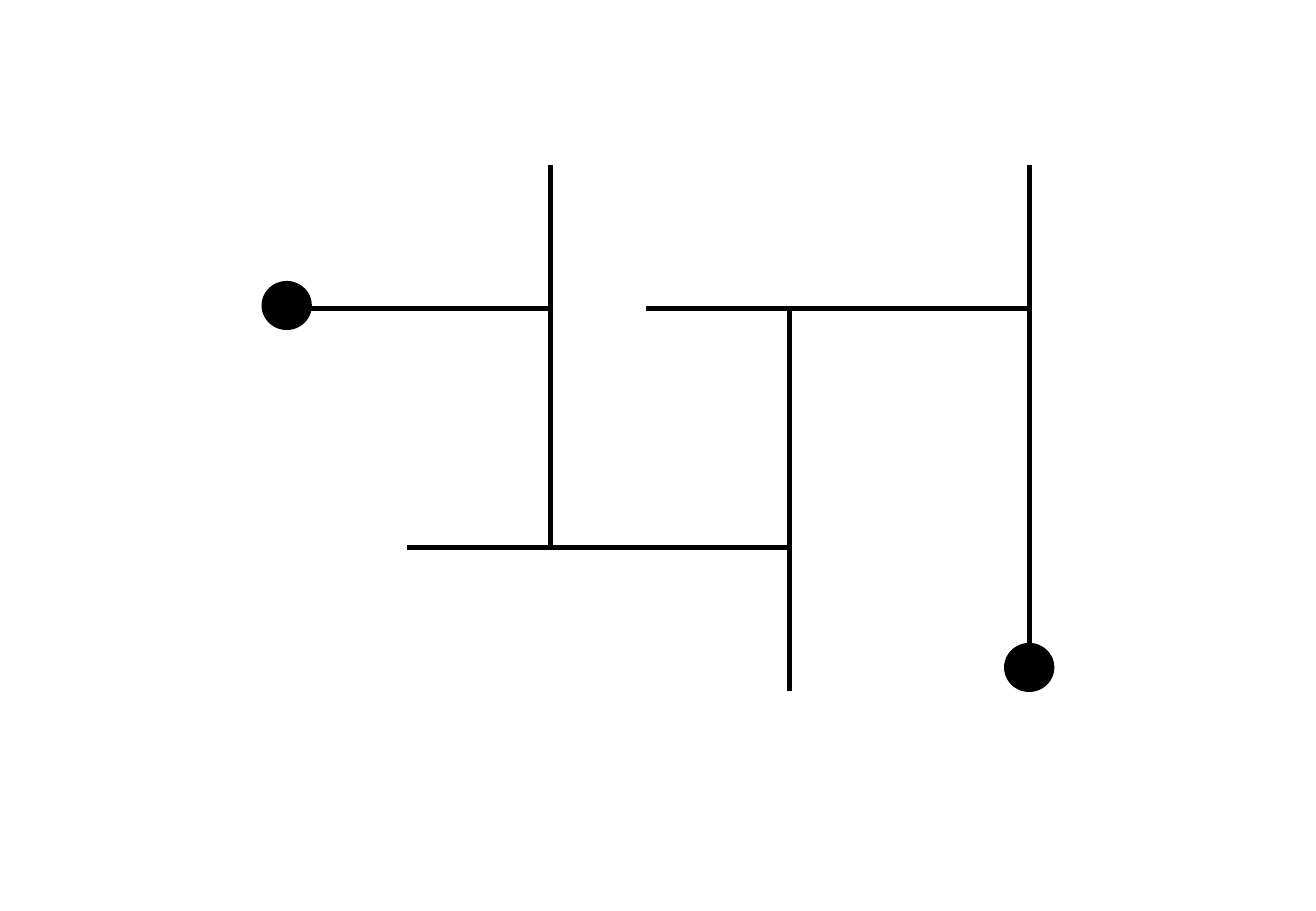
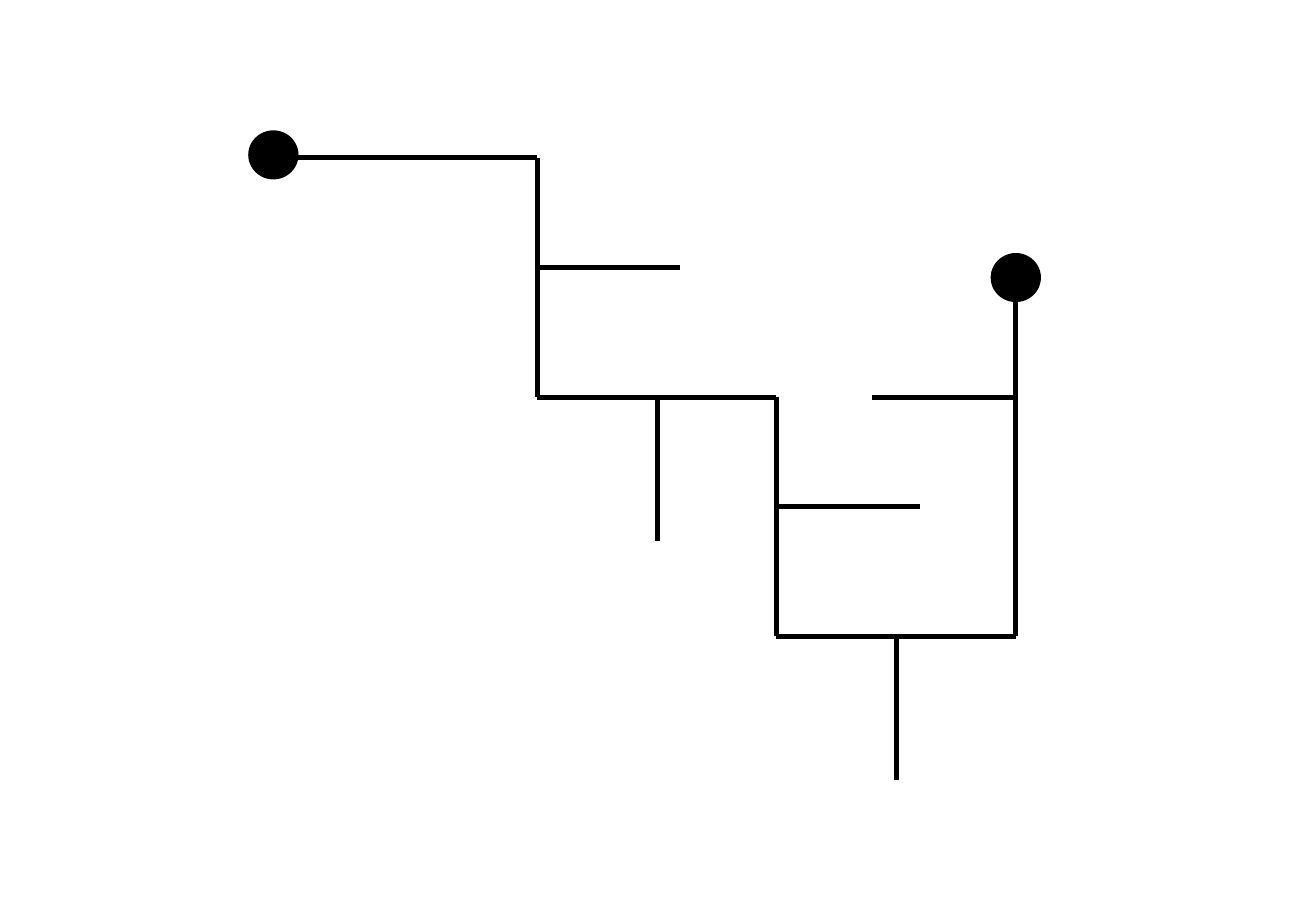
"""Build two slides of branching line diagrams with round end nodes."""
from dataclasses import dataclass

from lxml import etree
from pptx import Presentation
from pptx import util as u
from pptx.dml.color import RGBColor
from pptx.enum import shapes
from pptx.oxml import ns
from pptx.shapes.connector import Connector
from pptx.shapes.shapetree import GroupShapes

COLORS = {"ink": "000000", "background": "FFFFFF"}
STEP = 1.97
STUB = 1.18
TAIL = 2.76
MIDDLE = 0.99
SIDE = 0.9
NODE_WIDTH, NODE_HEIGHT = 0.4, 0.39
START_DROP = 0.22


@dataclass(frozen=True)
class Branch:
    x: float
    y: float
    across: float = 0
    down: float = 0


@dataclass(frozen=True)
class Diagram:
    left: float
    top: float
    end_node_top: float
    branches: tuple[Branch, ...]


DIAGRAMS = (
    Diagram(2.56, 2.54, 5.3, (
        Branch(2 * STEP, STEP, down=-STEP),
        Branch(0, 0, across=STEP),
        Branch(STEP, STEP, down=-STEP),
        Branch(STEP, 0, down=-STUB),
        Branch(STEP - STUB, STEP, across=STUB),
        Branch(2 * STEP, STEP + STUB, down=-STUB),
        Branch(STEP, STEP, across=STEP),
        Branch(2 * STEP, 0, across=STEP),
        Branch(2 * STEP - STUB, 0, across=STUB),
        Branch(3 * STEP, 0, down=-STUB),
        Branch(3 * STEP, TAIL, down=-TAIL),
    )),
    Diagram(2.45, 1.3, 2.09, (
        Branch(2 * STEP, 2 * STEP, down=-STEP),
        Branch(0, 0, across=STEP),
        Branch(STEP, STEP, down=-STEP),
        Branch(2 * STEP + MIDDLE, 2 * STEP + STUB, down=-STUB),
        Branch(STEP + MIDDLE, STEP, down=STUB),
        Branch(2 * STEP + STUB, STEP + SIDE, across=-STUB),
        Branch(STEP, STEP, across=STEP),
        Branch(2 * STEP, 2 * STEP, across=STEP),
        Branch(STEP, SIDE, across=STUB),
        Branch(3 * STEP, STEP, across=-STUB),
        Branch(3 * STEP, 2 * STEP, down=-TAIL),
    )),
)


def color(name: str) -> RGBColor:
    return RGBColor.from_string(COLORS[name])


def add_node(group: GroupShapes, left: float, top: float) -> None:
    node = group.add_shape(
        shapes.MSO_SHAPE.FLOWCHART_CONNECTOR,
        u.Inches(left), u.Inches(top), u.Inches(NODE_WIDTH), u.Inches(NODE_HEIGHT),
    )
    node.shadow.inherit = False
    node.fill.solid()
    node.fill.fore_color.rgb = color("ink")
    node.line.color.rgb = color("ink")
    node.line.width = u.Pt(1)


def add_branch(group: GroupShapes, diagram: Diagram, branch: Branch) -> Connector:
    x, y = diagram.left + branch.x, diagram.top + branch.y
    line = group.add_connector(
        shapes.MSO_CONNECTOR.STRAIGHT,
        u.Inches(x), u.Inches(y), u.Inches(x + branch.across), u.Inches(y + branch.down),
    )
    line.line.color.rgb = color("ink")
    line.line.width = u.Pt(3)
    etree.SubElement(line._element.spPr, ns.qn("a:effectLst"))
    return line


def add_diagram(presentation: Presentation, diagram: Diagram) -> None:
    slide = presentation.slides.add_slide(presentation.slide_layouts[6])
    slide.background.fill.solid()
    slide.background.fill.fore_color.rgb = color("background")
    group = slide.shapes.add_group_shape().shapes
    add_node(group, diagram.left - NODE_WIDTH, diagram.top - START_DROP)
    add_node(group, diagram.left + 3 * STEP - NODE_WIDTH / 2, diagram.end_node_top)
    for branch in diagram.branches:
        add_branch(group, diagram, branch)


def main() -> None:
    presentation = Presentation()
    presentation.slide_width = u.Inches(10.83)
    presentation.slide_height = u.Inches(7.5)
    for diagram in DIAGRAMS:
        add_diagram(presentation, diagram)
    presentation.save("out.pptx")


if __name__ == "__main__":
    main()
